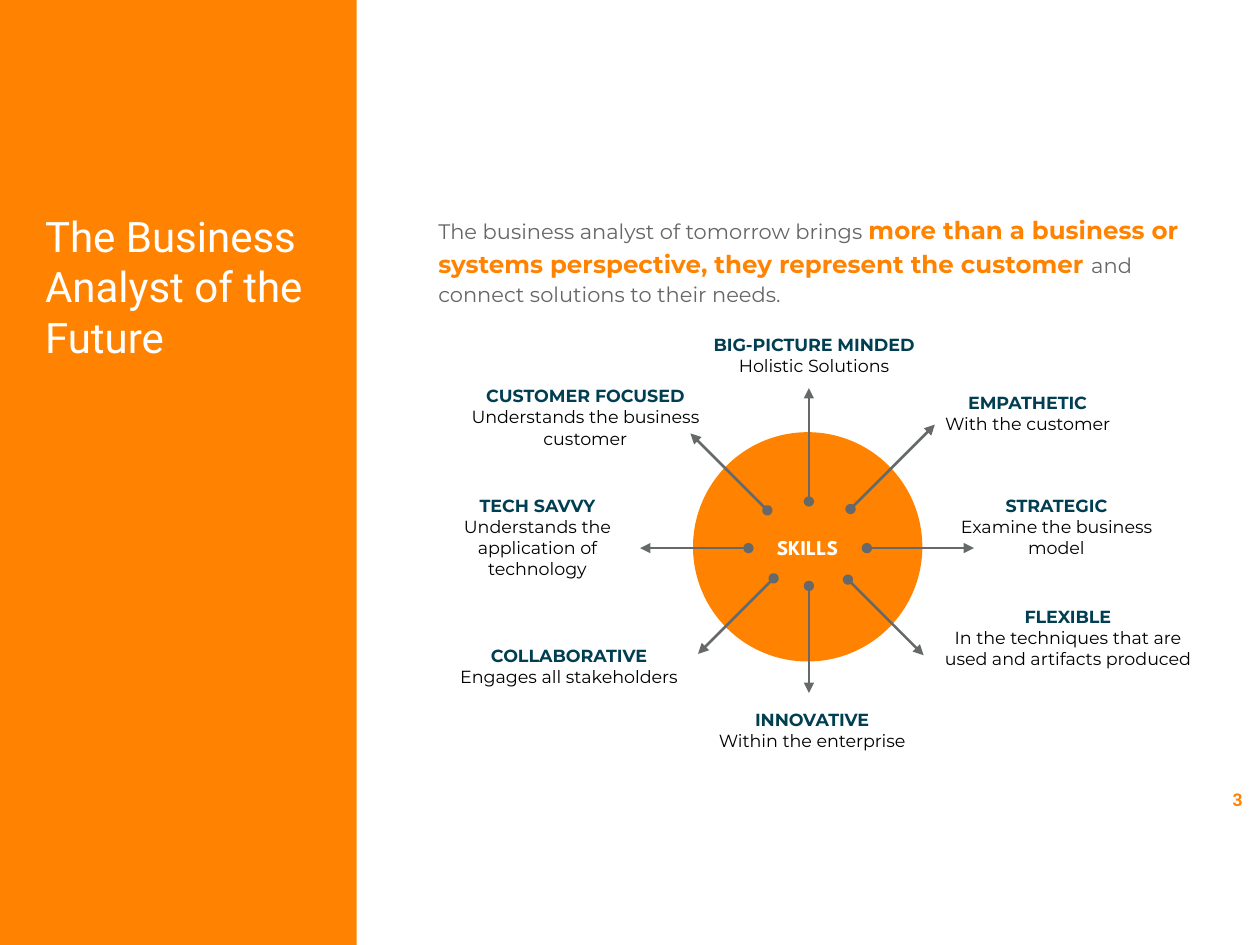
from lxml import etree
from pptx import Presentation
from pptx import util as u
from pptx.dml.color import RGBColor
from pptx.enum import shapes, text
from pptx.oxml.ns import qn

ORANGE, WHITE, GREY, TEAL, BLACK, LINE = (
    "FF8300", "FFFFFF", "666666", "003E52", "000000", "666969")
COLS, ROWS = 100, 75  # square grid over the slide

TITLE = "The Business Analyst of the Future"
INTRO = [
    ("The business analyst of tomorrow brings ", 12, GREY, False),
    ("more than a business or systems perspective, they represent the customer ",
     14, ORANGE, True),
    ("and connect solutions to their needs.", 12, GREY, False),
]
# heading, detail, label box, arrow start, arrow direction, arrow reach (grid units)
SKILLS = [
    ("BIG-PICTURE MINDED", "Holistic Solutions",
     (54.7, 26, 19.8, 4.4), (64.2, 39.8), (0, -1), 9),
    ("EMPATHETIC", "With the customer",
     (69.1, 30.6, 24.9, 4.4), (67.5, 40.4), (1, -1), 6.7),
    ("STRATEGIC", "Examine the business model",
     (73, 38.8, 21.7, 4.4), (68.8, 43.5), (1, 0), 8.5),
    ("FLEXIBLE", "In the techniques that are used and artifacts produced",
     (73.3, 47.6, 22.9, 6.1), (67.3, 46), (1, 1), 6),
    ("INNOVATIVE", "Within the enterprise",
     (49.9, 55.8, 29.1, 4.4), (64.2, 46.5), (0, 1), 8.5),
    ("COLLABORATIVE", "Engages all stakeholders",
     (30.6, 50.7, 29.1, 4.4), (61.4, 45.9), (-1, 1), 6),
    ("TECH SAVVY", "Understands the application of technology",
     (33.1, 38.8, 19.1, 6.1), (59.4, 43.5), (-1, 0), 8.6),
    ("CUSTOMER FOCUSED", "Understands the business customer",
     (34.5, 30.1, 23.9, 6.1), (60.9, 40.5), (-1, -1), 6.1),
]

prs = Presentation()
prs.slide_width, prs.slide_height = u.Inches(10), u.Inches(7.5)
s = prs.slides.add_slide(prs.slide_layouts[6])


def rgb(value):
    return RGBColor.from_string(value)


def grid(*lengths):
    return [round(n * prs.slide_width / COLS) for n in lengths]


def fill_text(sp, paragraphs, font, align=text.PP_ALIGN.LEFT,
              anchor=text.MSO_ANCHOR.TOP, pad=0.1, spacing=None):
    tf = sp.text_frame
    frame = {"word_wrap": True, "vertical_anchor": anchor,
             "margin_left": u.Inches(0.1), "margin_right": u.Inches(0.1),
             "margin_top": u.Inches(pad), "margin_bottom": u.Inches(pad)}
    for name, value in frame.items():
        setattr(tf, name, value)
    for i, runs in enumerate(paragraphs):
        p = tf.add_paragraph() if i else tf.paragraphs[0]
        p.alignment, p.line_spacing = align, spacing
        for words, size, color, bold in runs:
            r = p.add_run()
            r.text = words
            for name, value in {"name": font, "size": u.Pt(size), "bold": bold}.items():
                setattr(r.font, name, value)
            r.font.color.rgb = rgb(color)


def add_text(box, paragraphs, font, **style):
    fill_text(s.shapes.add_textbox(*grid(*box)), paragraphs, font, **style)


def add_shape(kind, box, color):
    sp = s.shapes.add_shape(kind, *grid(*box))
    sp.shadow.inherit = False
    sp.fill.solid()
    sp.fill.fore_color.rgb = rgb(color)
    sp.line.fill.background()
    return sp


def add_arrow(start, direction, reach):
    end = [a + d * reach for a, d in zip(start, direction)]
    line = s.shapes.add_connector(shapes.MSO_CONNECTOR.STRAIGHT, *grid(*start, *end))
    line.line.color.rgb = rgb(LINE)
    line.line.width = u.Pt(1.5)
    ln = line.line._get_or_add_ln()
    for tag, kind in (("a:headEnd", "oval"), ("a:tailEnd", "triangle")):
        etree.SubElement(ln, qn(tag), type=kind)
    etree.SubElement(line._element.spPr, qn("a:effectLst"))


# Orange background with a white panel
s.background.fill.solid()
s.background.fill.fore_color.rgb = rgb(ORANGE)
add_shape(shapes.MSO_SHAPE.RECTANGLE, (28.3, 0, COLS - 28.3, ROWS), WHITE)

# Title, introduction and page number
add_text((2.6, 15.7, 22.4, 43.5), [[(TITLE, 24, WHITE, False)]], "Roboto")
add_text((33.8, 15.7, 61.2, 30.2), [INTRO], "Montserrat", spacing=1.15)
add_text((93.6, 61.3, 6, 4.3), [[("3", 10, ORANGE, True)]], "Roboto",
         align=text.PP_ALIGN.RIGHT, anchor=text.MSO_ANCHOR.MIDDLE)

# Skills hub
hub = add_shape(shapes.MSO_SHAPE.OVAL, (55, 34.3, 18.2, 18.2), ORANGE)
fill_text(hub, [[("SKILLS", 12, WHITE, True)]], "League Spartan",
          align=text.PP_ALIGN.CENTER, anchor=text.MSO_ANCHOR.MIDDLE)

# Skill labels and their arrows
for heading, detail, box, start, direction, reach in SKILLS:
    add_text(box, [[(heading, 10, TEAL, True)], [(detail, 10, BLACK, False)]],
             "Montserrat", align=text.PP_ALIGN.CENTER, pad=0.05)
    add_arrow(start, direction, reach)

prs.save("out.pptx")
